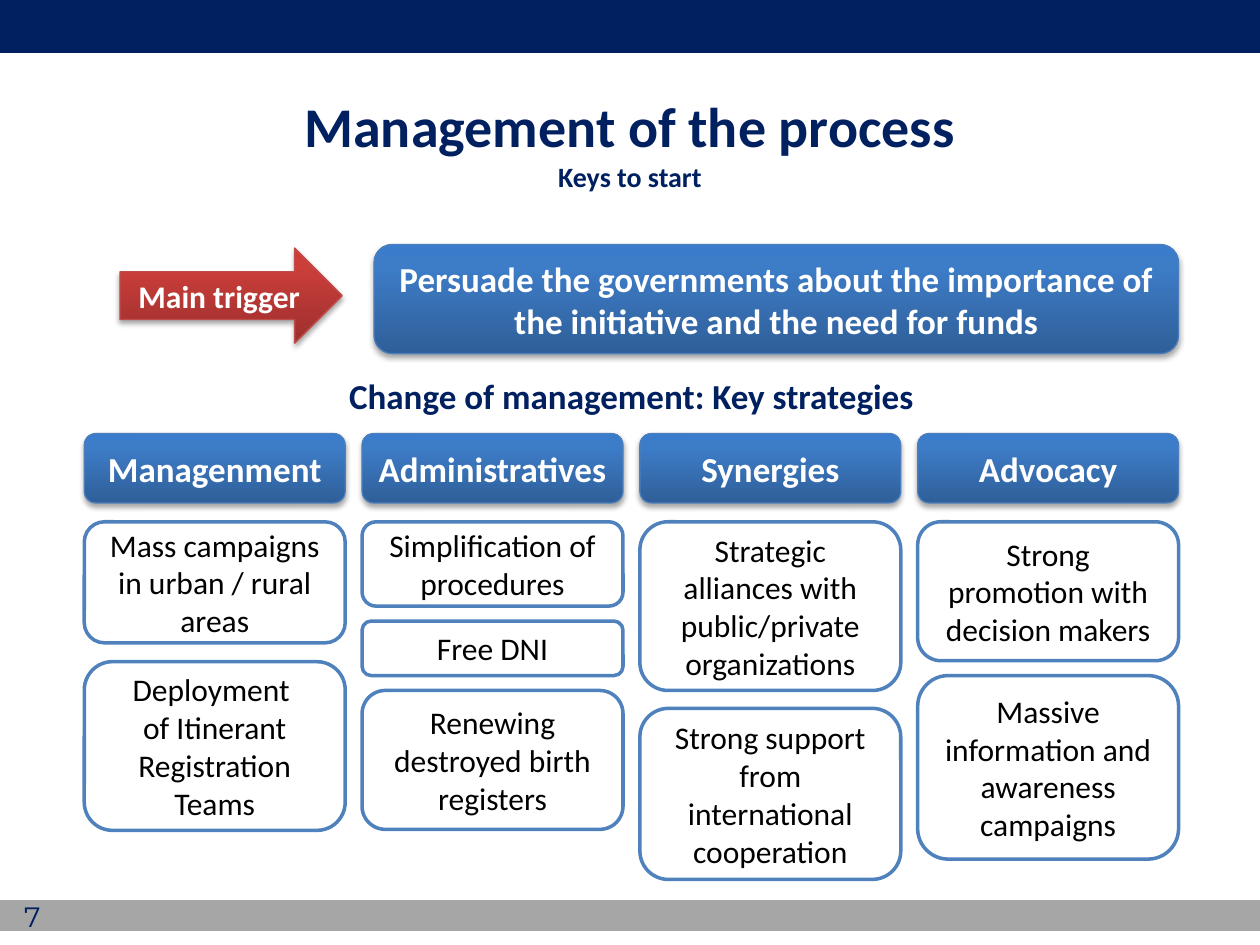
from copy import deepcopy
from lxml.etree import SubElement
from pptx import Presentation
from pptx.dml.color import RGBColor
from pptx.enum.shapes import MSO_SHAPE
from pptx.enum.text import MSO_ANCHOR, PP_ALIGN
from pptx.oxml.ns import qn
from pptx.util import Cm, Pt

HEX = {
    "navy": "002060", "white": "FFFFFF", "black": "000000",
    "gray": "A6A6A6", "edge": "4F81BD", "blue": "4B7EBC", "red": "BF4C48",
}
FADE = {
    "blue": ((0, "2F5F99"), (0.8, "3D7CC7"), (1, "3A7CCB")),
    "red": ((0, "9C2F2D"), (0.8, "CB3E3A"), (1, "CE3B37")),
}
TITLE = (("Management of the process", 32), ("Keys to start", 16))
GOAL = "Persuade the governments about the importance of the initiative and the need for funds"
COLS = [
    ("Managenment", 0.38, [
        ("Mass campaigns in urban / rural areas", 2.44),
        ("Deployment \nof Itinerant Registration Teams", 3.4)]),
    ("Administratives", 0.3, [
        ("Simplification of procedures", 1.7),
        ("Free DNI", 1.1),
        ("Renewing destroyed birth registers", 2.8)]),
    ("Synergies", 0.36, [
        ("Strategic alliances with public/private organizations", 3.4),
        ("Strong support from international cooperation", 3.45)]),
    ("Advocacy", 0.3, [
        ("Strong promotion with decision makers", 2.8),
        ("Massive information and awareness campaigns", 3.7)]),
]
LEFT, STEP, WIDE = 1.7, 5.6, 5.26
HEAD, BODY = 8.74, 10.52

deck = Presentation()
deck.slide_width, deck.slide_height = Cm(25.4), Cm(19.05)
page = deck.slides.add_slide(deck.slide_layouts[6])


def rgb(name):
    return RGBColor.from_string(HEX.get(name, name))


def write(frame, text, size=18, color="black", bold=False, font="Calibri",
          align=PP_ALIGN.CENTER, anchor=MSO_ANCHOR.MIDDLE):
    frame.word_wrap = True
    frame.vertical_anchor = anchor
    rows = [(row, size) for row in text.split("\n")] if isinstance(text, str) else text
    for i, (row, high) in enumerate(rows):
        para = frame.add_paragraph() if i else frame.paragraphs[0]
        para.alignment = align
        run = para.add_run()
        run.text = row
        run.font.size, run.font.bold, run.font.name = Pt(high), bold, font
        run.font.color.rgb = rgb(color)


def shape(kind, box, fill, line, width=2):
    item = page.shapes.add_shape(kind, *map(Cm, box))
    item.shadow.inherit = False
    item.line.color.rgb = rgb(line)
    item.line.width = Pt(width)
    if fill:
        item.fill.solid()
        item.fill.fore_color.rgb = rgb(fill)
    return item


def glossy(kind, box, tone, text, size=20):
    item = shape(kind, box, None, tone, 0.75)
    item.fill.gradient()
    item.fill.gradient_angle = 90
    stops = item._element.spPr.find(".//" + qn("a:gsLst"))
    stops.append(deepcopy(stops[-1]))
    for stop, (pos, color) in zip(item.fill.gradient_stops, FADE[tone]):
        stop.position = pos
        stop.color.rgb = rgb(color)
    glow = SubElement(item._element.spPr.find(qn("a:effectLst")), qn("a:outerShdw"),
                      blurRad=str(Pt(3.1)), dist=str(Pt(1.8)), dir="5400000", rotWithShape="0")
    tint = SubElement(glow, qn("a:srgbClr"), val=HEX["black"])
    SubElement(tint, qn("a:alpha"), val="35000")
    write(item.text_frame, text, size=size, color="white", bold=True)


def label(box, text, **form):
    write(page.shapes.add_textbox(*map(Cm, box)).text_frame, text, color="navy", **form)


ROUND = MSO_SHAPE.ROUNDED_RECTANGLE
shape(MSO_SHAPE.RECTANGLE, (0, 0, 25.4, 1.04), "navy", "navy")
label((0.3, 1.73, 24.8, 2.31), TITLE, bold=True, anchor=MSO_ANCHOR.TOP)
glossy(MSO_SHAPE.RIGHT_ARROW, (2.42, 5, 4.48, 1.92), "red", "Main trigger", 18)
glossy(ROUND, (7.54, 4.93, 16.22, 2.2), "blue", GOAL)
label((LEFT, 7.42, 22.06, 1.11), "Change of management: Key strategies",
      size=20, bold=True, anchor=MSO_ANCHOR.TOP)

for col, (name, gap, cards) in enumerate(COLS):
    left, top = LEFT + col * STEP, BODY
    glossy(ROUND, (left, HEAD, WIDE, 1.4), "blue", name)
    for text, high in cards:
        card = shape(ROUND, (left, top, WIDE, high), "white", "edge")
        write(card.text_frame, text)
        top += high + gap

shape(MSO_SHAPE.RECTANGLE, (0, 18.18, 25.4, 0.56), "gray", "gray")
label((0, 17.96, 1.07, 1.02), "7", size=16, font="Montserrat", align=PP_ALIGN.RIGHT)

deck.save("out.pptx")
